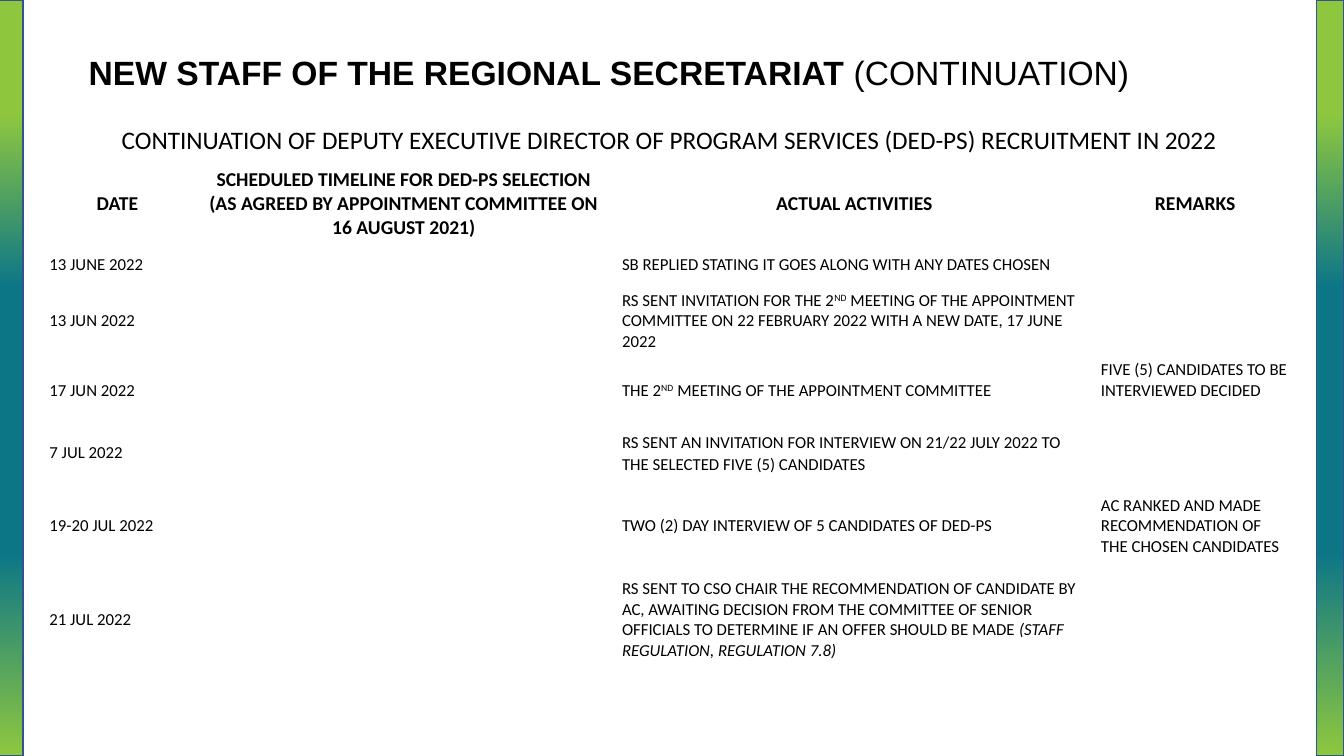
from copy import deepcopy
from pptx import Presentation
from pptx.dml.color import RGBColor
from pptx.enum.shapes import MSO_SHAPE as Preset
from pptx.enum.text import MSO_ANCHOR as Anchor, PP_ALIGN as Align
from pptx.util import Inches, Pt

BLACK = RGBColor(0x00, 0x00, 0x00)
GREEN = RGBColor(0x8E, 0xC7, 0x3E)
TEAL = RGBColor(0x0C, 0x76, 0x87)
EDGE = RGBColor(0x31, 0x53, 0x8F)

WIDTH, HEIGHT = Inches(13.33), Inches(7.5)
BAND_WIDTH = Inches(0.27)
BAND_STOPS = [(0, GREEN), (0.15, GREEN), (0.38, TEAL), (0.73, TEAL), (1, GREEN)]
COLUMNS = [1.49, 4.19, 4.75, 2.01]
ROWS = [0.42, 0.83, 0.37, 0.75, 0.63, 0.61, 0.84, 1.02]

SUBJECT = ("CONTINUATION OF DEPUTY EXECUTIVE DIRECTOR OF PROGRAM SERVICES "
           "(DED-PS) RECRUITMENT IN 2022")
HEADINGS = [
    "DATE",
    "SCHEDULED TIMELINE FOR DED-PS SELECTION "
    "(AS AGREED BY APPOINTMENT COMMITTEE ON 16 AUGUST 2021)",
    "ACTUAL ACTIVITIES",
    "REMARKS",
]
PLAIN, RAISED, ITALIC = "plain", "raised", "italic"
# Date, activity as (text, style) spans, remark
ACTIVITIES = [
    ("13 JUNE 2022",
     [("SB REPLIED STATING IT GOES ALONG WITH ANY DATES CHOSEN", PLAIN)], ""),
    ("13 JUN 2022",
     [("RS SENT INVITATION FOR THE 2", PLAIN), ("ND", RAISED),
      (" MEETING OF THE APPOINTMENT COMMITTEE ON 22 FEBRUARY 2022 "
       "WITH A NEW DATE, 17 JUNE 2022", PLAIN)], ""),
    ("17 JUN 2022",
     [("THE 2", PLAIN), ("ND", RAISED),
      (" MEETING OF THE APPOINTMENT COMMITTEE", PLAIN)],
     "FIVE (5) CANDIDATES TO BE INTERVIEWED DECIDED"),
    ("7 JUL 2022",
     [("RS SENT AN INVITATION FOR INTERVIEW ON 21/22 JULY 2022 "
       "TO THE SELECTED FIVE (5) CANDIDATES", PLAIN)], ""),
    ("19-20 JUL 2022",
     [("TWO (2) DAY INTERVIEW OF 5 CANDIDATES OF DED-PS", PLAIN)],
     "AC RANKED AND MADE RECOMMENDATION OF THE CHOSEN CANDIDATES"),
    ("21 JUL 2022",
     [("RS SENT TO CSO CHAIR THE RECOMMENDATION OF CANDIDATE BY AC, AWAITING "
       "DECISION FROM THE COMMITTEE OF SENIOR OFFICIALS TO DETERMINE IF AN "
       "OFFER SHOULD BE MADE ", PLAIN),
      ("(STAFF REGULATION, REGULATION 7.8)", ITALIC)], ""),
]


def add_span(para, text, size, font="Calibri", bold=False, style=PLAIN):
    span = para.add_run()
    span.text = text
    span.font.name, span.font.size = font, Pt(size)
    span.font.bold, span.font.italic = bold, style == ITALIC
    span.font.color.rgb = BLACK
    if style == RAISED:
        span.font._element.set("baseline", "30000")


def add_band(page, left):
    """Add a full-height side band with a vertical green-teal gradient."""
    band = page.shapes.add_shape(Preset.RECTANGLE, left, 0, BAND_WIDTH, HEIGHT)
    band.shadow.inherit = False
    band.line.color.rgb = EDGE
    band.line.width = Pt(1)
    band.fill.gradient()
    band.fill.gradient_angle = 270
    stops = band.fill.gradient_stops
    stop_list = stops[0]._gs.getparent()
    for _ in range(len(BAND_STOPS) - len(stops)):
        stop_list.append(deepcopy(stop_list[0]))
    for stop, (position, color) in zip(band.fill.gradient_stops, BAND_STOPS):
        stop.position = position
        stop.color.rgb = color


def set_title(page):
    title = page.shapes.title
    title.left, title.top = Inches(0.78), Inches(0.46)
    title.width, title.height = Inches(12.27), Inches(0.5)
    frame = title.text_frame
    frame.word_wrap = True
    frame.vertical_anchor = Anchor.MIDDLE
    para = frame.paragraphs[0]
    para.alignment = Align.LEFT
    para.line_spacing = 1.0
    add_span(para, "NEW STAFF OF THE REGIONAL SECRETARIAT ", 24, "Arial", bold=True)
    add_span(para, "(CONTINUATION)", 24, "Arial")


def fill_heading(cell, text, size, bold):
    para = cell.text_frame.paragraphs[0]
    para.alignment = Align.CENTER
    add_span(para, text, size, bold=bold)


def fill_entry(cell, spans):
    cell.margin_left = cell.margin_right = Inches(0.07)
    cell.margin_top = cell.margin_bottom = 0
    for text, style in spans:
        if text:
            add_span(cell.text_frame.paragraphs[0], text, 12, style=style)


def add_timeline(page):
    frame = page.shapes.add_table(
        len(ROWS), len(COLUMNS), Inches(0.42), Inches(1.19),
        Inches(sum(COLUMNS)), Inches(sum(ROWS)))
    table = frame.table
    table.first_row = table.horz_banding = False
    for column, width in zip(table.columns, COLUMNS):
        column.width = Inches(width)
    for row, height in zip(table.rows, ROWS):
        row.height = Inches(height)
    for cell in table.iter_cells():
        cell.fill.background()
        cell.vertical_anchor = Anchor.MIDDLE

    table.cell(0, 0).merge(table.cell(0, len(COLUMNS) - 1))
    fill_heading(table.cell(0, 0), SUBJECT, 18, bold=False)
    for column, heading in enumerate(HEADINGS):
        fill_heading(table.cell(1, column), heading, 14, bold=True)
    for row, (date, activity, remark) in enumerate(ACTIVITIES, start=2):
        entries = [[(date, PLAIN)], [], activity, [(remark, PLAIN)]]
        for column, spans in enumerate(entries):
            fill_entry(table.cell(row, column), spans)
    # The first remark sits one line-half high; the invitation is set looser.
    table.cell(4, 3).margin_bottom = Inches(0.2)
    table.cell(5, 2).text_frame.paragraphs[0].line_spacing = 1.07


def main():
    deck = Presentation()
    deck.slide_width, deck.slide_height = WIDTH, HEIGHT
    page = deck.slides.add_slide(deck.slide_layouts[5])
    add_band(page, WIDTH - BAND_WIDTH)
    add_band(page, Inches(-0.04))
    set_title(page)
    add_timeline(page)
    deck.save("out.pptx")


if __name__ == "__main__":
    main()
